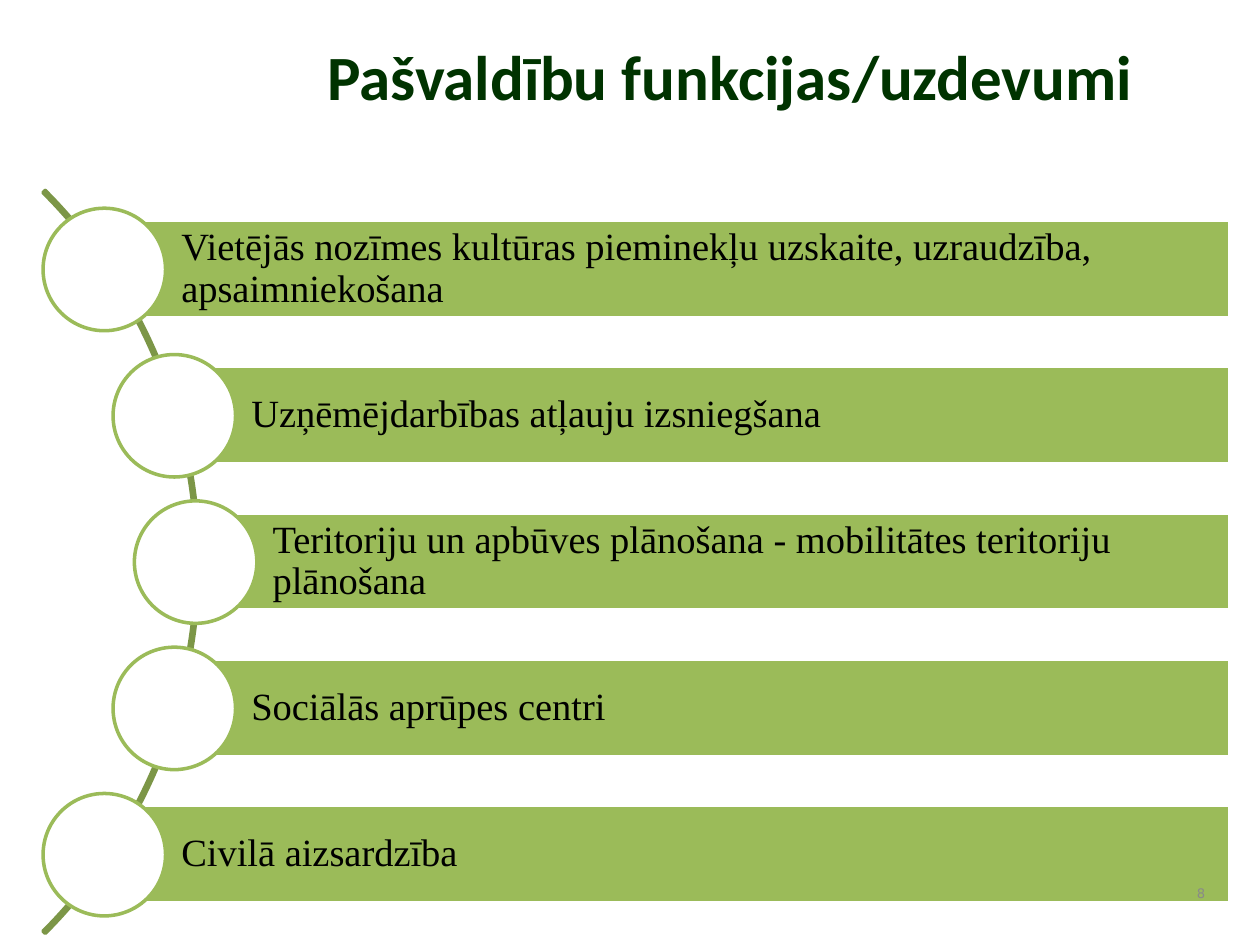
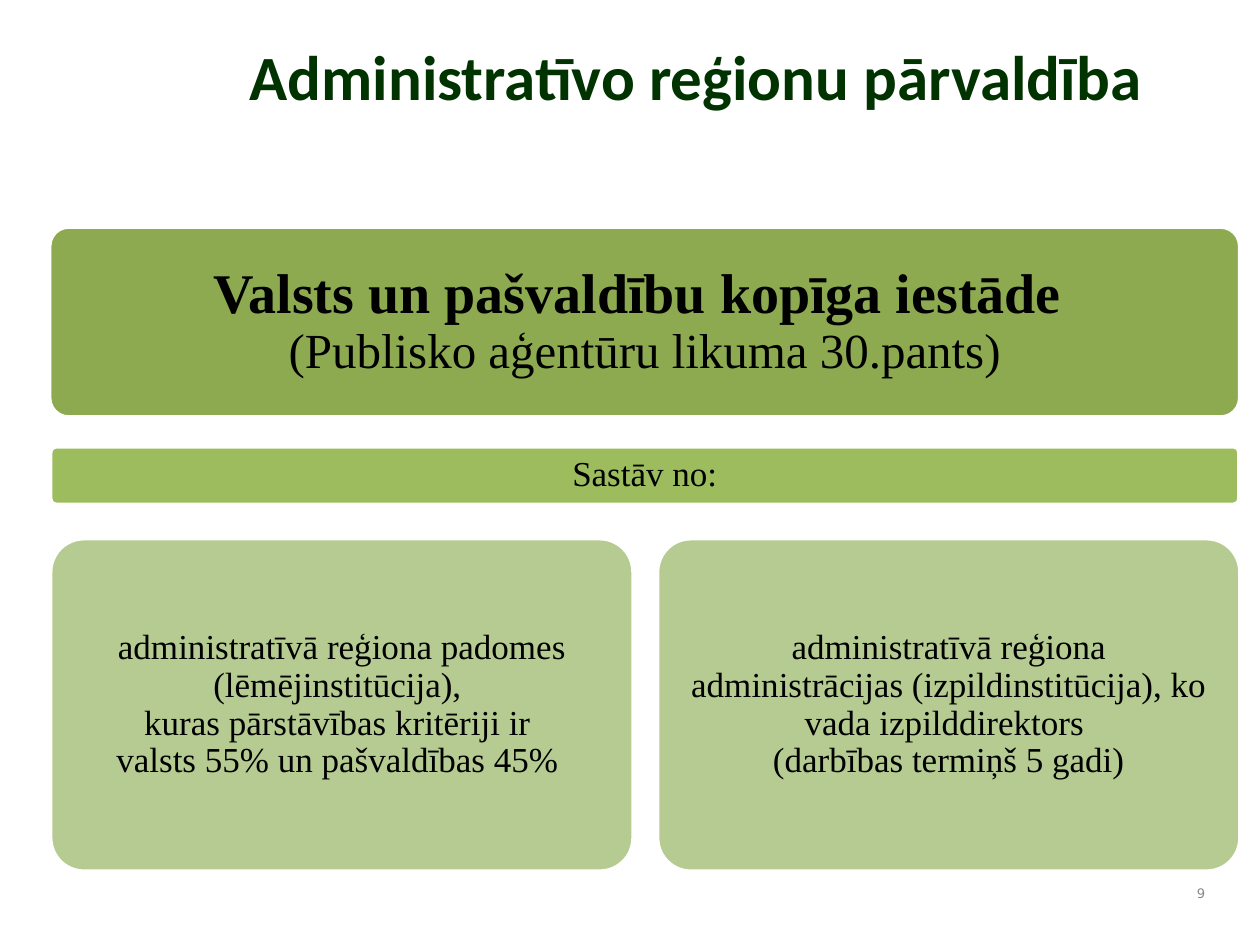
import pptx
import pptx.dml.color
import pptx.enum.shapes
import pptx.enum.text
import pptx.util

Pt = pptx.util.Pt
tint = pptx.dml.color.RGBColor.from_string
forms = pptx.enum.shapes.MSO_SHAPE
align = pptx.enum.text.PP_ALIGN
anchor = pptx.enum.text.MSO_ANCHOR

# Shared look
WHITE, GREEN, BLACK = "FFFFFF", "9BBB59", "000000"
SERIF = "Times New Roman"
HEAD = {"name": "Calibri", "size": Pt(36), "bold": True}
FOOT = {"name": "DejaVu Sans", "size": Pt(7.5)}


def draw(slide, form, box, fill, line):
    shape = slide.shapes.add_shape(form, *map(Pt, box))
    shape.shadow.inherit = False
    if fill:
        shape.fill.solid()
        shape.fill.fore_color.rgb = tint(fill)
    else:
        shape.fill.background()
    shape.line.color.rgb = tint(line)
    shape.line.width = Pt(2)
    return shape


def write(shape, parts, color, side, inset, mid=True, space=None):
    """Fill one paragraph; parts are (text, font values), one per line."""
    frame = shape.text_frame
    left, top, right, base = map(Pt, inset)
    values = {"word_wrap": True, "margin_left": left, "margin_top": top,
              "margin_right": right, "margin_bottom": base,
              "vertical_anchor": anchor.MIDDLE if mid else anchor.TOP}
    for key, value in values.items():
        setattr(frame, key, value)
    para = frame.paragraphs[0]
    para.alignment = side
    para.line_spacing = space
    for i, (text, font) in enumerate(parts):
        if i:
            para.add_line_break()
        run = para.add_run()
        run.text = text
        run.font.color.rgb = tint(color)
        for key, value in font.items():
            setattr(run.font, key, value)


deck = pptx.Presentation()
deck.slide_width, deck.slide_height = Pt(720), Pt(540)

# Titles
pages = []
for title, left in (("Pašvaldību funkcijas/uzdevumi", 150.5),
                    ("Administratīvo reģionu pārvaldība ", 119.5)):
    page = deck.slides.add_slide(deck.slide_layouts[6])
    box = page.shapes.add_textbox(Pt(left), Pt(18), Pt(684 - left), Pt(89))
    write(box, [(title, HEAD)], "003300", align.CENTER, (7.2, 3.6, 7.2, 3.6),
          mid=False)
    pages.append(page)
tasks, region = pages

# Tasks: arc behind the bars
arc = draw(tasks, forms.BLOCK_ARC, (-486.7, 20.9, 600.5, 600.5), None, "7C9647")
for i, value in enumerate((189, 27, 0.003)):
    arc.adjustments[i] = value

# Tasks: bars with circles at their left ends
bars = (
    (59.6, "Vietējās nozīmes kultūras pieminekļu uzskaite, uzraudzība, apsaimniekošana"),
    (99.6, "Uzņēmējdarbības atļauju izsniegšana"),
    (111.8, "Teritoriju un apbūves plānošana - mobilitātes teritoriju plānošana"),
    (99.6, "Sociālās aprūpes centri"),
    (59.6, "Civilā aizsardzība"),
)
for i, (left, text) in enumerate(bars):
    top = 126 + 83.6 * i
    bar = draw(tasks, forms.RECTANGLE, (left, top, 703 - left, 55.5), GREEN, WHITE)
    write(bar, [(text, {"name": SERIF, "size": Pt(22)})], BLACK, align.LEFT,
          (44, 4.3, 4.3, 4.3), space=0.9)
    draw(tasks, forms.OVAL, (left - 35, top - 7, 70, 70), WHITE, GREEN)

# Region: institution, link band and its two bodies
big = {"name": SERIF, "size": Pt(32), "bold": True}
mid = {"name": SERIF, "size": Pt(28)}
small = {"name": SERIF, "size": Pt(20)}
cards = (
    ((28.4, 129.8, 680, 108.5), "8DAA51", 12.5,
     [("Valsts un pašvaldību kopīga iestāde ", big),
      ("(Publisko aģentūru likuma 30.pants)", mid)]),
    ((29, 255.3, 679, 32.9), "9CBC5D", 6.5, [("Sastāv no:", small)]),
    ((29, 307.8, 332.8, 190), "B5CB91", 11.5,
     [("administratīvā reģiona padomes (lēmējinstitūcija), ", small),
      ("kuras pārstāvības kritēriji ir ", small),
      ("valsts 55% un pašvaldības 45% ", small)]),
    ((375.8, 307.8, 332.8, 190), "B5CB91", 11.5,
     [("administratīvā reģiona administrācijas (izpildinstitūcija), "
       "ko vada izpilddirektors ", small),
      ("(darbības termiņš 5 gadi)", small)]),
)
for box, fill, pad, parts in cards:
    card = draw(region, forms.ROUNDED_RECTANGLE, box, fill, WHITE)
    card.adjustments[0] = 0.1
    write(card, parts, BLACK, align.CENTER, (pad,) * 4, space=0.9)

# Page numbers
for number, page in enumerate(pages, 8):
    box = page.shapes.add_textbox(Pt(671.8), Pt(498.2), Pt(24), Pt(24))
    write(box, [(str(number), FOOT)], "898989", align.RIGHT, (7.2, 3.6, 7.2, 3.6))

deck.save("out.pptx")
